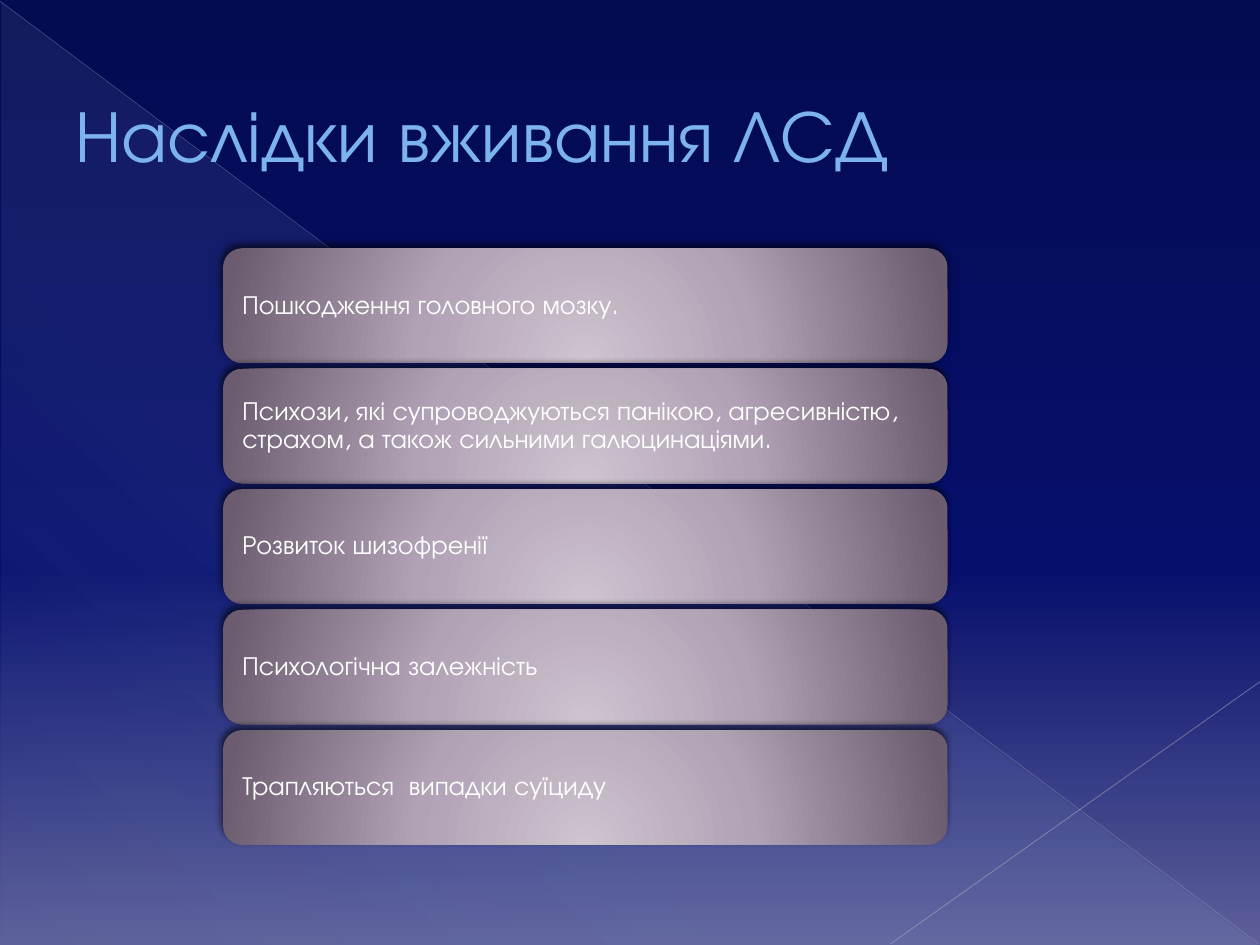
"""Builds a slide listing the consequences of LSD use as a stack of cards."""
from lxml.etree import SubElement
from pptx import Presentation
from pptx.dml.color import RGBColor
from pptx.enum.shapes import MSO_CONNECTOR, MSO_SHAPE
from pptx.enum.text import MSO_ANCHOR, MSO_AUTO_SIZE, PP_ALIGN
from pptx.oxml import parse_xml
from pptx.oxml.ns import nsdecls, qn
from pptx.util import Inches, Pt

FONT = "TeX Gyre Adventor"
COLORS = {
    "title": "7CB2ED",
    "title_edge": "446D91",
    "card_text": "FFFFFF",
    "shadow": "000000",
    "falling_line": "B2B3BE",
    "rising_line": "BBBCC5",
    "sky_top": "040B51",
    "sky_middle": "060F6C",
    "sky_bottom": "5C5F99",
    "wedge": "ACCBF9",
    "card_center": "CDC4CF",
    "card_middle": "B1A2B5",
    "card_edge": "6B5D6F",
}
CONSEQUENCES = [
    "Пошкодження головного мозку.",
    "Психози, які супроводжуються панікою, агресивністю, страхом, "
    "а також сильними галюцинаціями.",
    "Розвиток шизофренії",
    "Психологічна залежність",
    "Трапляються  випадки суїциду",
]
CARD_TOP = 1.97
CARD_PITCH = 0.956
CARD_GLOW = (
    '<a:path path="circle">'
    '<a:fillToRect l="50000" t="155000" r="50000" b="-55000"/></a:path>'
)


def linear(angle):
    return f'<a:lin ang="{angle * 60000}" scaled="0"/>'


def set_gradient(parent, stops, direction):
    """Swap the solid fill of parent for stops of (percent, colour, opacity)."""
    stop_xml = "".join(
        f'<a:gs pos="{position * 1000}"><a:srgbClr val="{COLORS[color]}">'
        f'<a:alpha val="{opacity * 1000}"/></a:srgbClr></a:gs>'
        for position, color, opacity in stops
    )
    gradient = parse_xml(
        f'<a:gradFill {nsdecls("a")} rotWithShape="1">'
        f"<a:gsLst>{stop_xml}</a:gsLst>{direction}</a:gradFill>"
    )
    parent.replace(parent.find(qn("a:solidFill")), gradient)


def paint_background(slide):
    slide.background.fill.solid()
    stops = [(0, "sky_top", 100), (60, "sky_middle", 100), (100, "sky_bottom", 100)]
    set_gradient(slide.element.find(".//" + qn("p:bgPr")), stops, linear(90))


def add_plain_shape(slide, preset, left, top, width, height):
    shape = slide.shapes.add_shape(
        preset, Inches(left), Inches(top), Inches(width), Inches(height)
    )
    shape.shadow.inherit = False
    shape.fill.solid()
    shape.line.fill.background()
    return shape


def add_wedge(slide):
    wedge = add_plain_shape(slide, MSO_SHAPE.RIGHT_TRIANGLE, 0.01, 0.02, 9.98, 7.48)
    stops = [(0, "wedge", 10), (70, "wedge", 8), (100, "wedge", 1)]
    set_gradient(wedge.element.spPr, stops, linear(133))


def add_faint_line(slide, start, end, color, width, opacity):
    line = slide.shapes.add_connector(
        MSO_CONNECTOR.STRAIGHT, *(Inches(value) for value in (*start, *end))
    )
    line.line.width = Pt(width)
    line.line.color.rgb = RGBColor.from_string(COLORS[color])
    properties = line.element.spPr
    stroke_color = properties.find(".//" + qn("a:srgbClr"))
    SubElement(stroke_color, qn("a:alpha"), val=str(opacity * 1000))
    SubElement(properties, qn("a:effectLst"))


def write_run(paragraph, text, size, color):
    run = paragraph.add_run()
    run.text = text
    run.font.name = FONT
    run.font.size = Pt(size)
    run.font.color.rgb = RGBColor.from_string(COLORS[color])
    return run


def write_title(slide, text):
    title = slide.shapes.title
    title.left, title.top = Inches(0.5), Inches(0.29)
    title.width, title.height = Inches(9), Inches(1.53)
    title.element.getparent().append(title.element)
    frame = title.text_frame
    frame.auto_size = MSO_AUTO_SIZE.NONE
    frame.vertical_anchor = MSO_ANCHOR.MIDDLE
    paragraph = frame.paragraphs[0]
    paragraph.alignment = PP_ALIGN.LEFT
    run = write_run(paragraph, text, 42, "title")
    edge = parse_xml(
        f'<a:ln {nsdecls("a")} w="{Pt(0.5)}"><a:solidFill>'
        f'<a:srgbClr val="{COLORS["title_edge"]}"/></a:solidFill></a:ln>'
    )
    run.font.fill.solid()
    run.font.color.rgb = RGBColor.from_string(COLORS["title"])
    run.font._element.insert(0, edge)


def add_card(slide, top, text):
    card = add_plain_shape(slide, MSO_SHAPE.ROUNDED_RECTANGLE, 1.77, top, 5.75, 0.91)
    stops = [(0, "card_center", 100), (46, "card_middle", 100), (100, "card_edge", 100)]
    properties = card.element.spPr
    set_gradient(properties, stops, CARD_GLOW)
    shadow = parse_xml(
        f'<a:outerShdw {nsdecls("a")} blurRad="{Pt(4)}" dist="{Pt(3)}" '
        f'dir="{245 * 60000}" rotWithShape="0">'
        f'<a:srgbClr val="{COLORS["shadow"]}"><a:alpha val="60000"/></a:srgbClr>'
        "</a:outerShdw>"
    )
    properties.find(qn("a:effectLst")).append(shadow)
    frame = card.text_frame
    frame.word_wrap = True
    frame.vertical_anchor = MSO_ANCHOR.MIDDLE
    frame.margin_left = frame.margin_right = Inches(0.11)
    frame.margin_top = frame.margin_bottom = Inches(0.1)
    paragraph = frame.paragraphs[0]
    paragraph.alignment = PP_ALIGN.LEFT
    paragraph.line_spacing = 0.9
    paragraph.space_after = Pt(5.25)
    write_run(paragraph, text, 15, "card_text")


def main():
    presentation = Presentation()
    presentation.slide_width, presentation.slide_height = Inches(10), Inches(7.5)
    slide = presentation.slides.add_slide(presentation.slide_layouts[5])
    paint_background(slide)
    add_wedge(slide)
    add_faint_line(slide, (0, 0.01), (9.99, 7.49), "falling_line", 0.39, 35)
    add_faint_line(slide, (10, 5.41), (7.07, 7.49), "rising_line", 0.47, 45)
    write_title(slide, "Наслідки вживання ЛСД")
    for row, consequence in enumerate(CONSEQUENCES):
        add_card(slide, CARD_TOP + row * CARD_PITCH, consequence)
    presentation.save("out.pptx")


if __name__ == "__main__":
    main()
